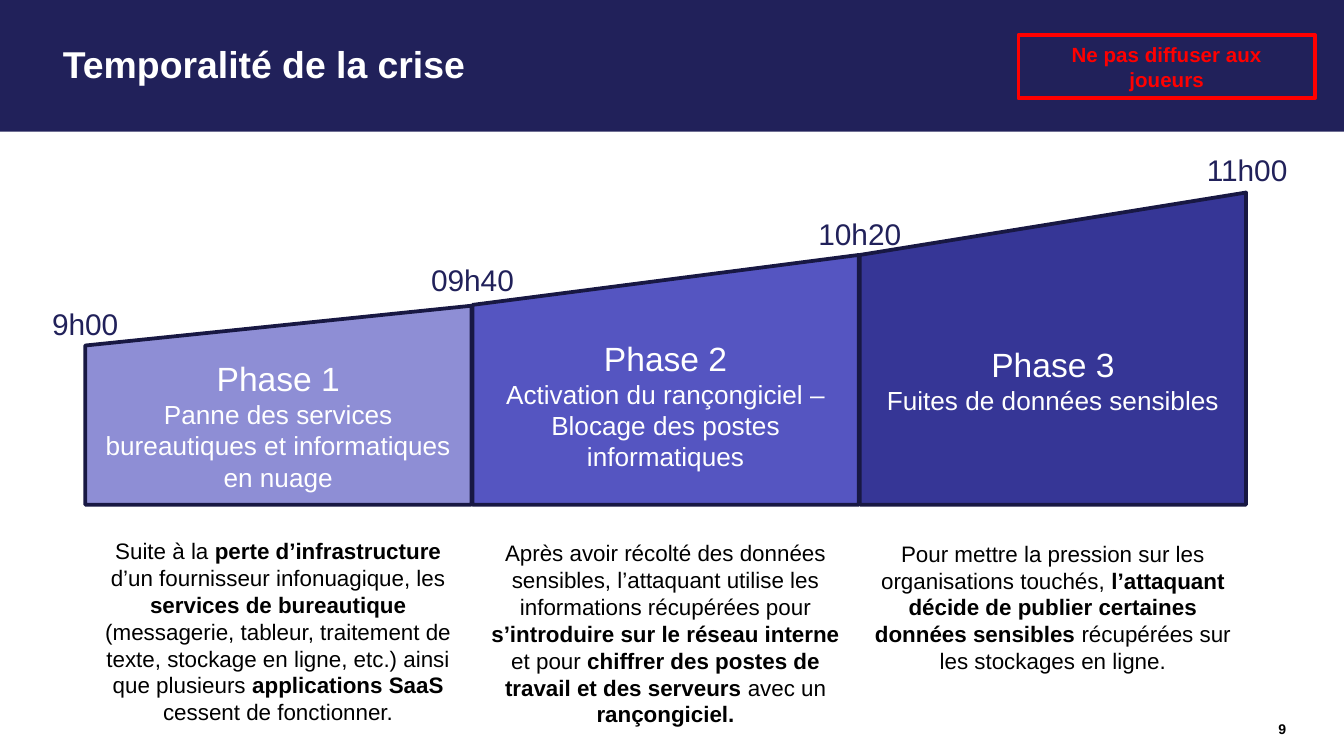
import dataclasses

import pptx
import pptx.dml.color
import pptx.enum.shapes
import pptx.enum.text
import pptx.util

Cm = pptx.util.Cm
Pt = pptx.util.Pt
Shape = pptx.enum.shapes.MSO_SHAPE
Align = pptx.enum.text.PP_ALIGN
Anchor = pptx.enum.text.MSO_ANCHOR


@dataclasses.dataclass(frozen=True)
class Theme:
    font: str = "Arial"
    navy: str = "21215A"
    outline: str = "181843"
    white: str = "FFFFFF"
    black: str = "000000"
    warning: str = "FF0000"
    phases: tuple = ("8E8ED5", "5555C1", "363696")
    title_size: float = 20
    phase_size: float = 18
    time_size: float = 16
    subtitle_size: float = 14
    body_size: float = 12
    warning_size: float = 11
    number_size: float = 7.5
    line_width: float = 2


def rgb(value):
    return pptx.dml.color.RGBColor.from_string(value)


class SlideBuilder:
    def __init__(self, page, theme):
        self.page = page
        self.theme = theme

    def block(self, kind, left, top, width, height, fill=None, line=None):
        shape = self.page.shapes.add_shape(
            kind, Cm(left), Cm(top), Cm(width), Cm(height))
        shape.shadow.inherit = False
        if fill:
            shape.fill.solid()
            shape.fill.fore_color.rgb = rgb(fill)
        else:
            shape.fill.background()
        if line:
            shape.line.color.rgb = rgb(line)
            shape.line.width = Pt(self.theme.line_width)
        else:
            shape.line.fill.background()
        return shape

    def text_box(self, left, top, width, height):
        return self.page.shapes.add_textbox(
            Cm(left), Cm(top), Cm(width), Cm(height))

    def set_text(self, shape, paragraphs, color, align=Align.CENTER, anchor=Anchor.MIDDLE):
        """Fill a shape; each paragraph is (size, [(text, bold), ...])."""
        frame = shape.text_frame
        frame.word_wrap = True
        frame.vertical_anchor = anchor
        for index, (size, spans) in enumerate(paragraphs):
            para = frame.add_paragraph() if index else frame.paragraphs[0]
            para.alignment = align
            for text, bold in spans:
                span = para.add_run()
                span.text = text
                span.font.name = self.theme.font
                span.font.size = Pt(size)
                span.font.bold = bold
                span.font.color.rgb = rgb(color)

    def header(self, title, warning):
        theme = self.theme
        self.block(Shape.RECTANGLE, 0, 0, 25.4, 2.49, theme.navy)
        box = self.text_box(0.94, 0.5, 18, 1.5)
        self.set_text(box, [(theme.title_size, [(title, True)])], theme.white, Align.LEFT)
        box.text_frame.paragraphs[0].line_spacing = 0.9
        frame = self.block(Shape.RECTANGLE, 19.25, 0.66, 5.6, 1.2, line=theme.warning)
        self.set_text(frame, [(theme.warning_size, [(warning, True)])], theme.warning)

    def phase(self, left, bottom, width, height, fill, name, subtitle):
        theme = self.theme
        shape = self.block(Shape.FLOWCHART_MANUAL_INPUT, left, bottom - height,
                           width, height, fill, theme.outline)
        self.set_text(shape, [(theme.phase_size, [(name, False)]),
                              (theme.subtitle_size, [(subtitle, False)])], theme.white)

    def description(self, left, top, width, height, spans):
        box = self.text_box(left, top, width, height)
        self.set_text(box, [(self.theme.body_size, spans)], self.theme.black,
                      anchor=Anchor.TOP)

    def time_label(self, center, top, text):
        width = 2.4
        box = self.text_box(center - width / 2, top, width, 0.94)
        self.set_text(box, [(self.theme.time_size, [(text, False)])], self.theme.navy,
                      anchor=Anchor.TOP)

    def page_number(self, number):
        box = self.text_box(20.55, 13.28, 3.76, 1)
        frame = box.text_frame
        frame.margin_left = frame.margin_right = 0
        frame.margin_top = frame.margin_bottom = 0
        self.set_text(box, [(self.theme.number_size, [(number, True)])],
                      self.theme.black, Align.RIGHT)


LEFT, PITCH, PHASE_WIDTH, PHASE_BOTTOM = 1.61, 7.32, 7.3, 9.54

# Height, name, subtitle, top and height of the description, description spans
PHASES = [
    (3.76, "Phase 1", "Panne des services bureautiques et informatiques en nuage",
     10.03, 3.84, [
         ("Suite à la ", False),
         ("perte d’infrastructure ", True),
         ("d’un fournisseur infonuagique, les ", False),
         ("services de bureautique ", True),
         ("(messagerie, tableur, traitement de texte, stockage en ligne, etc.) "
          "ainsi que plusieurs ", False),
         ("applications SaaS ", True),
         ("cessent de fonctionner.", False)]),
    (4.72, "Phase 2", "Activation du rançongiciel – Blocage des postes informatiques",
     10.07, 3.84, [
         ("Après avoir récolté des données sensibles, l’attaquant utilise les "
          "informations récupérées pour ", False),
         ("s’introduire sur le réseau interne ", True),
         ("et pour ", False),
         ("chiffrer des postes de travail et des serveurs ", True),
         ("avec un ", False),
         ("rançongiciel.", True)]),
    (5.9, "Phase 3", "Fuites de données sensibles",
     10.08, 2.82, [
         ("Pour mettre la pression sur les organisations touchés, ", False),
         ("l’attaquant décide de publier certaines données sensibles ", True),
         ("récupérées sur les stockages en ligne.", False)]),
]
TIMES = [("9h00", 5.66), ("09h40", 4.83), ("10h20", 3.95), ("11h00", 2.75)]


def main():
    deck = pptx.Presentation()
    deck.slide_width, deck.slide_height = Cm(25.4), Cm(14.29)
    theme = Theme()
    builder = SlideBuilder(deck.slides.add_slide(deck.slide_layouts[6]), theme)

    builder.header("Temporalité de la crise", "Ne pas diffuser aux joueurs")
    for index, (height, name, subtitle, top, box_height, spans) in enumerate(PHASES):
        left = LEFT + index * PITCH
        builder.phase(left, PHASE_BOTTOM, PHASE_WIDTH, height,
                      theme.phases[index], name, subtitle)
        builder.description(left, top, PHASE_WIDTH, box_height, spans)
    for index, (text, top) in enumerate(TIMES):
        builder.time_label(LEFT + index * PITCH, top, text)
    builder.page_number("9")

    deck.save("out.pptx")


if __name__ == "__main__":
    main()
